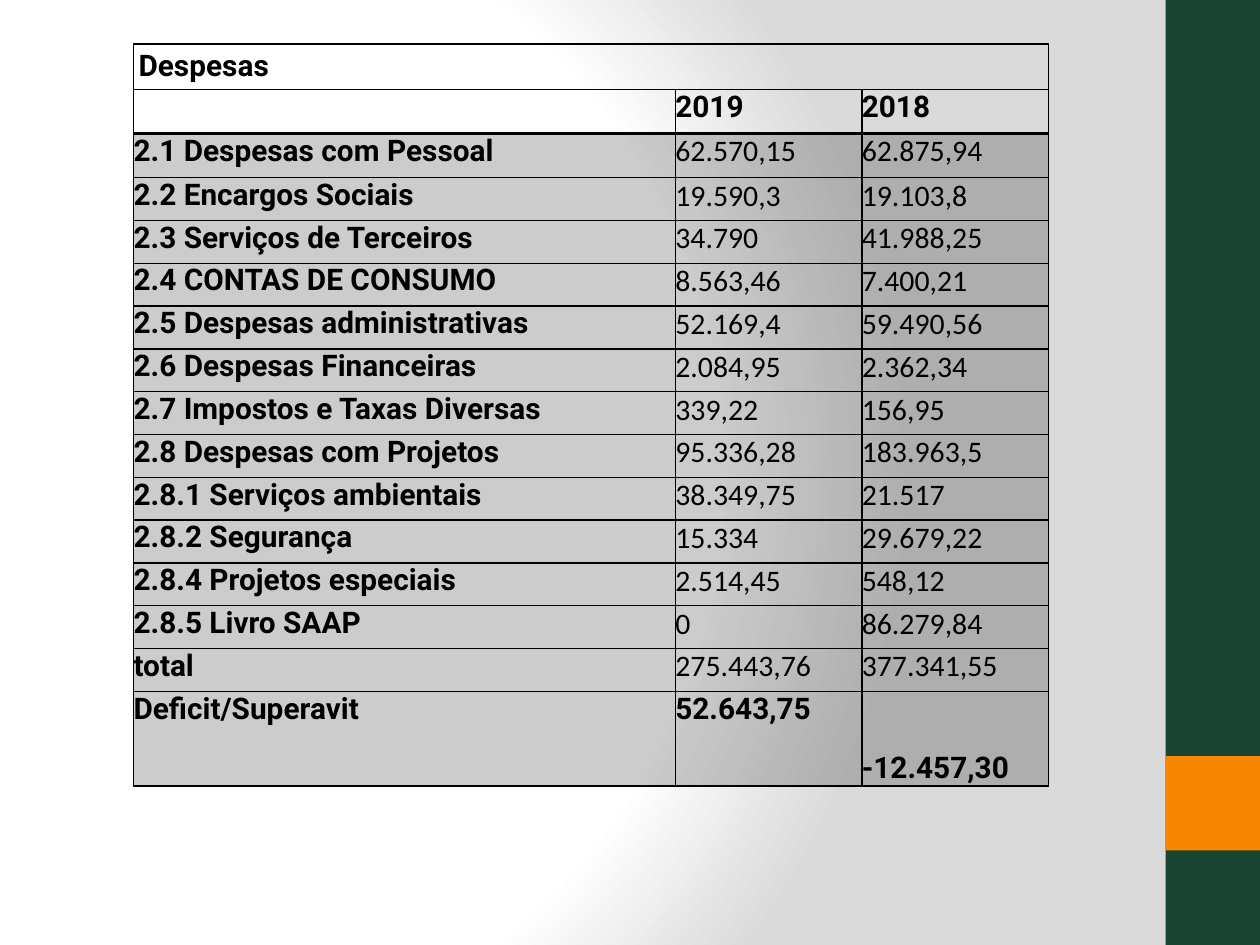
"""Build a slide with the 2019 and 2018 expense table."""
from dataclasses import dataclass

from lxml.etree import SubElement
from pptx import Presentation
from pptx.dml.color import RGBColor
from pptx.enum.shapes import MSO_SHAPE
from pptx.enum.text import MSO_ANCHOR
from pptx.oxml import parse_xml
from pptx.oxml.ns import nsdecls, qn
from pptx.util import Inches, Pt

BLACK = RGBColor(0x00, 0x00, 0x00)
WHITE = RGBColor(0xFF, 0xFF, 0xFF)
GRAY = RGBColor(0xDA, 0xDA, 0xDA)
GREEN = RGBColor(0x19, 0x44, 0x31)
ORANGE = RGBColor(0xF8, 0x86, 0x00)


@dataclass
class Band:
    top: float
    height: float
    color: RGBColor


@dataclass
class Expense:
    label: str
    y2019: str
    y2018: str
    bold: bool = False
    height: float = 0.34


BANDS = [Band(0, 7.5, GREEN), Band(6, 0.75, ORANGE)]
COLUMN_WIDTHS = [4.3, 1.48, 1.48]
HEADER_ROWS = 2
EXPENSES = [
    Expense("Despesas", "", "", True, 0.36),
    Expense("", "2019", "2018", True, 0.35),
    Expense("2.1 Despesas com Pessoal", "62.570,15", "62.875,94", height=0.35),
    Expense("2.2 Encargos Sociais", "19.590,3", "19.103,8"),
    Expense("2.3 Serviços de Terceiros", "34.790", "41.988,25"),
    Expense("2.4 CONTAS DE CONSUMO", "8.563,46", "7.400,21"),
    Expense("2.5 Despesas administrativas", "52.169,4", "59.490,56"),
    Expense("2.6 Despesas Financeiras", "2.084,95", "2.362,34"),
    Expense("2.7 Impostos e Taxas Diversas", "339,22", "156,95"),
    Expense("2.8 Despesas com Projetos", "95.336,28", "183.963,5"),
    Expense("2.8.1 Serviços ambientais", "38.349,75", "21.517"),
    Expense("2.8.2 Segurança", "15.334", "29.679,22"),
    Expense("2.8.4 Projetos especiais", "2.514,45", "548,12"),
    Expense("2.8.5 Livro SAAP", "0", "86.279,84"),
    Expense("total", "275.443,76", "377.341,55"),
    Expense("Deficit/Superavit", "52.643,75", "-12.457,30", True, 0.46),
]


def set_background(s) -> None:
    stops = "".join(
        f'<a:gs pos="{pos * 1000}"><a:srgbClr val="{color}"/></a:gs>'
        for pos, color in [(0, WHITE), (75, WHITE), (100, GRAY)]
    )
    s.element.cSld.insert(0, parse_xml(
        f'<p:bg {nsdecls("p", "a")}><p:bgPr><a:gradFill rotWithShape="1">'
        f'<a:gsLst>{stops}</a:gsLst><a:path path="circle">'
        '<a:fillToRect l="20000" t="50000" r="100000" b="50000"/></a:path>'
        '</a:gradFill><a:effectLst/></p:bgPr></p:bg>'
    ))


def add_band(s, band: Band) -> None:
    sp = s.shapes.add_shape(MSO_SHAPE.RECTANGLE, Inches(9.25), Inches(band.top),
                            Inches(0.75), Inches(band.height))
    sp.shadow.inherit = False
    sp.fill.solid()
    sp.fill.fore_color.rgb = band.color
    sp.line.fill.background()


def set_borders(cell, top: int, bottom: int) -> None:
    tc_pr = cell._tc.get_or_add_tcPr()
    for side, width in [("L", 1), ("R", 1), ("T", top), ("B", bottom)]:
        ln = SubElement(tc_pr, qn(f"a:ln{side}"), w=str(Pt(width)))
        SubElement(SubElement(ln, qn("a:solidFill")), qn("a:srgbClr"), val=str(BLACK))


def shade(cell) -> None:
    cell.fill.solid()
    cell.fill.fore_color.rgb = BLACK
    color = cell._tc.tcPr.find(f'{qn("a:solidFill")}/{qn("a:srgbClr")}')
    SubElement(color, qn("a:alpha"), val="20000")


def write_cell(cell, text: str, bold: bool, inset: float) -> None:
    cell.margin_left = cell.margin_right = Inches(inset)
    cell.margin_top = cell.margin_bottom = Inches(inset)
    if not text:
        return
    r = cell.text_frame.paragraphs[0].add_run()
    r.text = text
    r.font.size = Pt(17)
    r.font.name = "Roboto" if bold else "Calibri"
    r.font.bold = bold
    r.font.color.rgb = BLACK


def add_expense_table(s, expenses: list[Expense]) -> None:
    frame = s.shapes.add_table(len(expenses), len(COLUMN_WIDTHS), Inches(1.06),
                               Inches(0.35), Inches(7.25), Inches(5.74))
    table = frame.table
    table.first_row = table.horz_banding = False
    for column, width in zip(table.columns, COLUMN_WIDTHS):
        column.width = Inches(width)
    for i, expense in enumerate(expenses):
        table.rows[i].height = Inches(expense.height)
        for j, text in enumerate([expense.label, expense.y2019, expense.y2018]):
            cell = table.cell(i, j)
            write_cell(cell, text, expense.bold or j == 0, 0 if i else 0.04)
            set_borders(cell, 2 if i == HEADER_ROWS else 1,
                        2 if i == HEADER_ROWS - 1 else 1)
            if i < HEADER_ROWS:
                cell.fill.background()
            else:
                shade(cell)
    title = table.cell(0, 0)
    title.merge(table.cell(0, 2))
    title.vertical_anchor = MSO_ANCHOR.MIDDLE
    deficit = table.cell(len(expenses) - 1, 2)
    deficit.text_frame.paragraphs[0].line_spacing = Pt(54)


def main() -> None:
    prs = Presentation()
    prs.slide_width, prs.slide_height = Inches(10), Inches(7.5)
    s = prs.slides.add_slide(prs.slide_layouts[6])
    set_background(s)
    for band in BANDS:
        add_band(s, band)
    add_expense_table(s, EXPENSES)
    prs.save("out.pptx")


if __name__ == "__main__":
    main()
